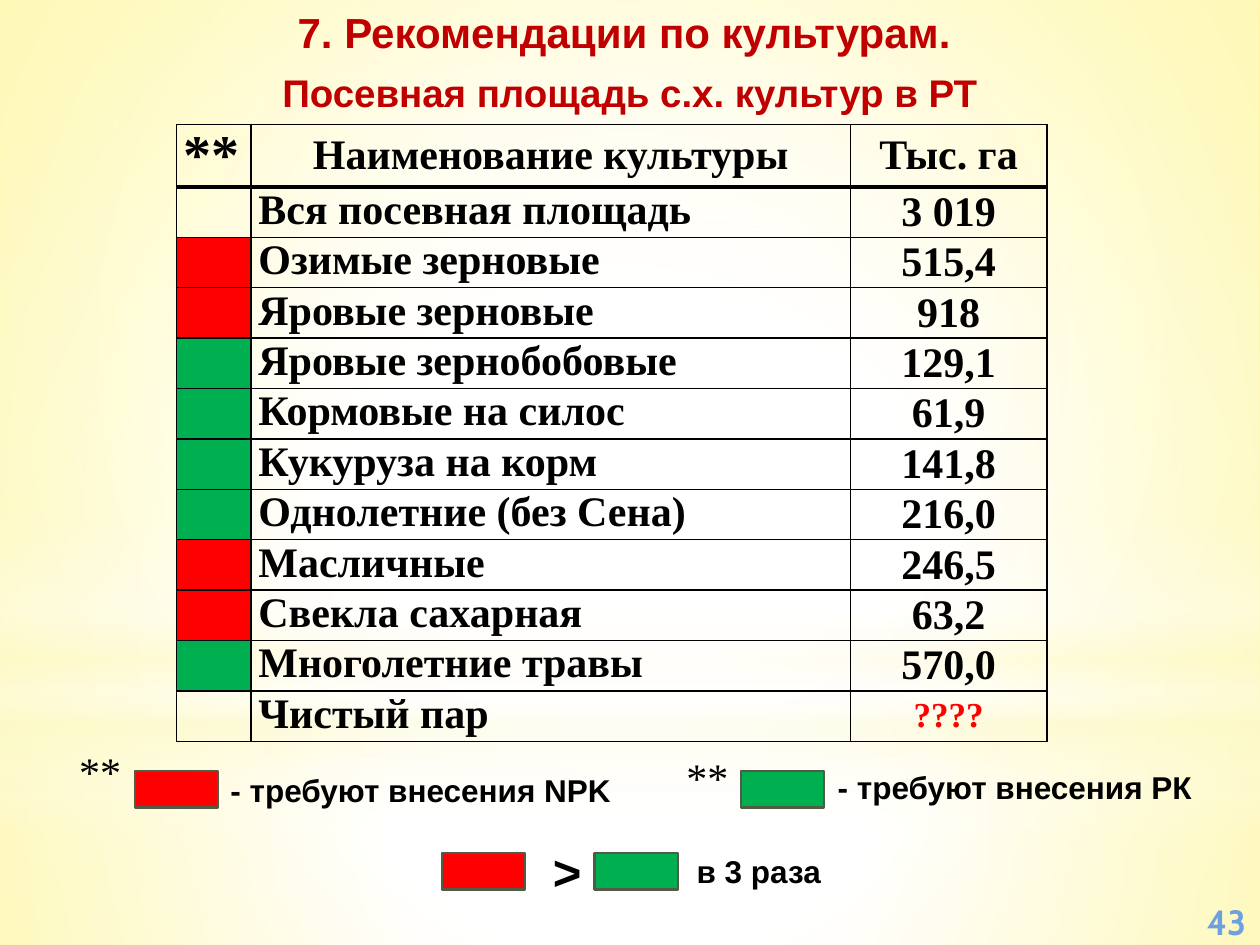
from lxml.etree import SubElement
from pptx import Presentation
from pptx.dml.color import RGBColor
from pptx.enum.shapes import MSO_SHAPE as SHAPE
from pptx.enum.text import MSO_ANCHOR as ANCHOR, MSO_AUTO_SIZE as AUTO, PP_ALIGN as ALIGN
from pptx.oxml.ns import qn
from pptx.util import Pt

RED, GREEN, DARK_RED, BLACK = "FF0000", "00B050", "C00000", "000000"
SANS, SERIF = "Arial", "Times New Roman"
CENTER = (50, 50, 50, 50)


def rgb(value):
    return RGBColor.from_string(value)


class Deck:
    """Builds the slide's elements in one style, with lengths in points."""

    def __init__(self, width, height):
        self.prs = Presentation()
        self.prs.slide_width, self.prs.slide_height = Pt(width), Pt(height)
        self.s = self.prs.slides.add_slide(self.prs.slide_layouts[6])

    def gradient(self, fill, owner, stops, to=None):
        fill.gradient()
        grad = owner.find(".//" + qn("a:gradFill"))
        for child in list(grad):
            grad.remove(child)
        stop_list = SubElement(grad, qn("a:gsLst"))
        for pos, color, alpha in stops:
            gs = SubElement(stop_list, qn("a:gs"), pos=str(pos * 1000))
            clr = SubElement(gs, qn("a:srgbClr"), val=color)
            if alpha < 100:
                SubElement(clr, qn("a:alpha"), val=str(alpha * 1000))
        if to:
            circle = SubElement(grad, qn("a:path"), path="circle")
            sides = {side: str(v * 1000) for side, v in zip("ltrb", to)}
            SubElement(circle, qn("a:fillToRect"), **sides)
        else:
            SubElement(grad, qn("a:lin"), ang="5400000", scaled="0")

    def background(self, stops, to):
        self.gradient(self.s.background.fill, self.s.element, stops, to)

    def shape(self, x, y, w, h, kind=SHAPE.RECTANGLE):
        sp = self.s.shapes.add_shape(kind, Pt(x), Pt(y), Pt(w), Pt(h))
        sp.shadow.inherit = False
        return sp

    def glow(self, x, y, w, h, stops, to=CENTER, kind=SHAPE.RECTANGLE):
        sp = self.shape(x, y, w, h, kind)
        sp.line.fill.background()
        self.gradient(sp.fill, sp.element.spPr, stops, to)

    def swatch(self, x, y, color):
        sp = self.shape(x, y, 47.5, 20.9)
        sp.fill.solid()
        sp.fill.fore_color.rgb = rgb(color)
        sp.line.color.rgb = rgb("515B45")
        sp.line.width = Pt(1.25)

    def style(self, p, text, size, font=SANS, color=BLACK, bold=True, align=None):
        p.text = text
        p.alignment = align
        f = p.font
        f.size, f.name, f.bold = Pt(size), font, bold
        if color:
            f.color.rgb = rgb(color)

    def text(self, x, y, w, h, text, size, wrap=False, anchor=ANCHOR.TOP, **look):
        tf = self.s.shapes.add_textbox(Pt(x), Pt(y), Pt(w), Pt(h)).text_frame
        tf.word_wrap, tf.vertical_anchor = wrap, anchor
        tf.auto_size = AUTO.NONE if wrap else AUTO.SHAPE_TO_FIT_TEXT
        p = tf.paragraphs[0]
        self.style(p, text, size, **look)
        return p

    def number(self, x, y, w, h, text, stops):
        p = self.text(x, y, w, h, text, 20, True, ANCHOR.MIDDLE,
                      font="Cabin", color=None, align=ALIGN.CENTER)
        r = p.runs[0]
        self.gradient(r.font.fill, p.runs[0]._r, stops)

    def cell(self, cell, fill, top, bottom):
        cell.margin_left = cell.margin_right = Pt(4.3)
        cell.margin_top = cell.margin_bottom = 0
        if fill:
            cell.fill.solid()
            cell.fill.fore_color.rgb = rgb(fill)
        else:
            cell.fill.background()
        props = cell._tc.get_or_add_tcPr()
        for i, (side, width) in enumerate(zip("LRTB", (1, 1, top, bottom))):
            ln = SubElement(props, qn(f"a:ln{side}"), w=str(Pt(width)))
            SubElement(SubElement(ln, qn("a:solidFill")), qn("a:srgbClr"), val=BLACK)
            props.insert(i, ln)

    def table(self, x, y, widths, heights, header, rows):
        table = self.s.shapes.add_table(len(heights), len(widths), Pt(x), Pt(y),
                                        Pt(sum(widths)), Pt(sum(heights))).table
        table.first_row = table.horz_banding = False
        for column, width in zip(table.columns, widths):
            column.width = Pt(width)
        for row, height in zip(table.rows, heights):
            row.height = Pt(height)
        for i, (mark, name, area) in enumerate([header] + rows):
            for j, text in enumerate(("" if i else mark, name, area)):
                cell = table.cell(i, j)
                self.cell(cell, mark if i and j == 0 else None,
                          2.25 if i == 1 else 1, 2.25 if i == 0 else 1)
                if not text:
                    continue
                unknown = text == "????"
                size = 32 if j == 0 else 20 if unknown else 24
                centered = j == 2 or (i == 0 and j == 1)
                if i == 0 or j == 2:
                    cell.vertical_anchor = ANCHOR.MIDDLE
                self.style(cell.text_frame.paragraphs[0], text, size, SERIF,
                           RED if unknown else BLACK,
                           align=ALIGN.CENTER if centered else None)


def main():
    deck = Deck(720, 540)
    deck.background([(0, "FFFFFF", 100), (42, "FFFFFF", 100), (100, "FFF577", 100)],
                    (24, 44, 24, 12))
    deck.glow(0, 401.8, 720, 138.2,
              [(0, "FFFFFF", 91), (37, "FFFFFF", 76), (100, "FEFAC9", 79)])
    deck.glow(0, 0, 720, 401.8,
              [(0, "FFFFFF", 89), (48, "FFFFFF", 62), (100, "FEFAC9", 79)])
    deck.glow(0, 296.6, 720, 180,
              [(0, "FFFFFF", 0), (29, "FFFFFF", 30), (45, "FEFAC9", 40),
               (55, "FFFFFF", 26), (65, "FEFAC9", 60), (100, "FFFFFF", 0)], to=None)
    deck.glow(0, 126, 720, 401.8, [(0, "FFFFFF", 100), (56, "FFFFFF", 0)],
              kind=SHAPE.OVAL)

    crops = [
        (None, "Вся посевная площадь", "3 019"),
        (RED, "Озимые зерновые", "515,4"),
        (RED, "Яровые зерновые", "918"),
        (GREEN, "Яровые зернобобовые", "129,1"),
        (GREEN, "Кормовые на силос", "61,9"),
        (GREEN, "Кукуруза на корм", "141,8"),
        (GREEN, "Однолетние (без Сена)", "216,0"),
        (RED, "Масличные", "246,5"),
        (RED, "Свекла сахарная", "63,2"),
        (GREEN, "Многолетние травы", "570,0"),
        (None, "Чистый пар", "????"),
    ]
    deck.table(100.8, 71.2, (42.6, 342.6, 112.3), [35.3] + [28.8] * len(crops),
               ("**", "Наименование культуры", "Тыс. га"), crops)

    heading = dict(wrap=True, color=DARK_RED, align=ALIGN.CENTER)
    deck.text(0, 27.4, 720, 41.7, "Посевная площадь с.х. культур в РТ", 22,
              anchor=ANCHOR.BOTTOM, **heading)
    deck.text(0, 0, 720, 36, "7. Рекомендации по культурам. ", 24, **heading)

    for x, y, color in ((77, 440.6, RED), (423.4, 440.6, GREEN),
                        (252.7, 487.4, RED), (339.8, 487.4, GREEN)):
        deck.swatch(x, y, color)
    for x, y in ((38.2, 422.6), (385.2, 426.2)):
        deck.text(x, y, 38.9, 36, "**", 24, font=SERIF, bold=False)
    for x, y, w, h, text, size in (
            (124.6, 437, 239, 28.8, "- требуют внесения NPK", 18),
            (471.6, 435.6, 223.9, 28.8, "- требуют внесения РК", 18),
            (308.9, 477.4, 31, 41, ">", 28),
            (391, 483.1, 86.4, 28.8, "в 3 раза", 18)):
        deck.text(x, y, w, h, text, size)
    deck.number(681.8, 512.6, 38.2, 27.4, "43",
                [(0, "2F4D71", 100), (78, "6E9FDE", 100), (100, "F1F5FC", 100)])
    deck.prs.save("out.pptx")


if __name__ == "__main__":
    main()
